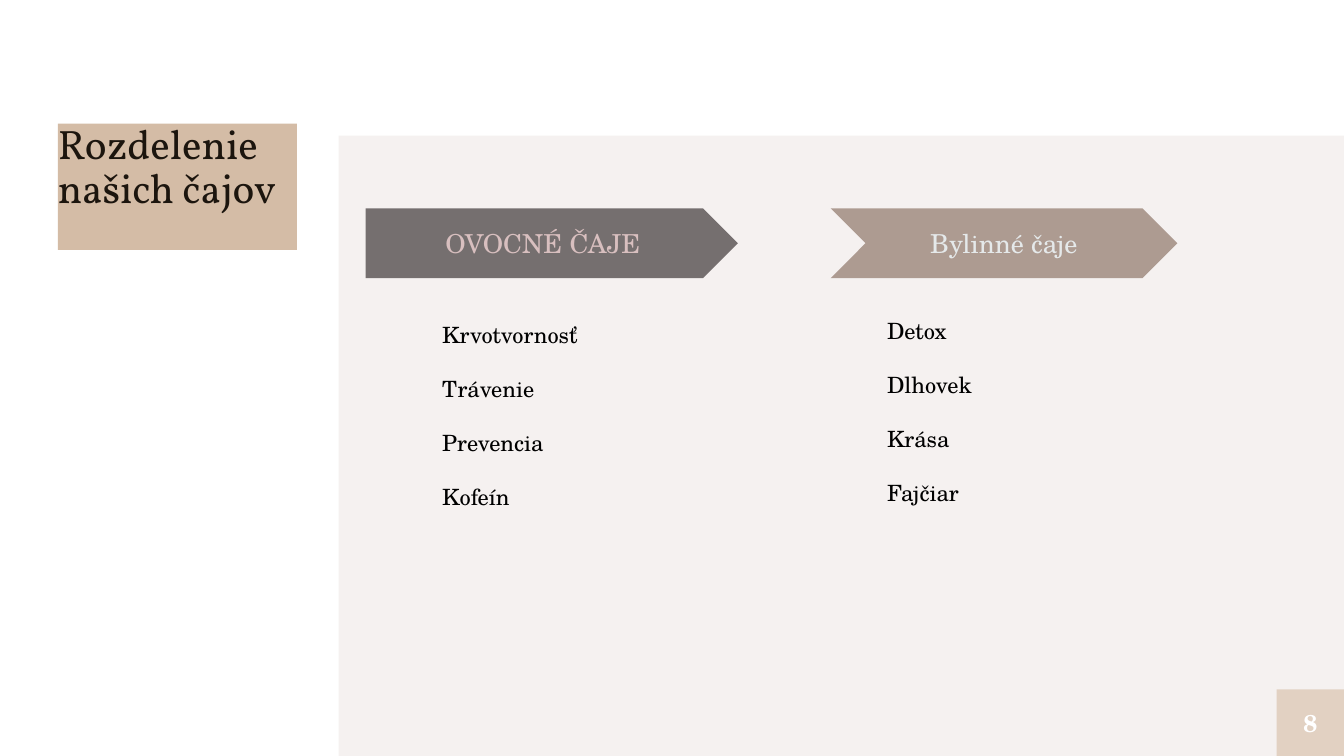
from pptx import Presentation
from pptx import util as u
from pptx.dml.color import RGBColor
from pptx.enum import shapes, text
from lxml import etree

COLORS = {
    "panel": "F5F1F0", "title_fill": "D4BCA6", "title": "1C150E",
    "page_fill": "E2D1C2", "page": "FFFFFF",
    "fruit_fill": "756F6F", "fruit": "D8BFBF",
    "herbal_fill": "AD9B91", "herbal": "E5E9EA", "list": "000000",
}
A_NS = "http://schemas.openxmlformats.org/drawingml/2006/main"
SHAPE = shapes.MSO_SHAPE


class TeaSlide:
    heading_font = "Vollkorn"
    body_font = "TeX Gyre Schola"

    def __init__(self, slide):
        self.slide = slide

    def place(self, element, box):
        element.left, element.top, element.width, element.height = map(u.Inches, box)

    def fill(self, element, color):
        element.fill.solid()
        element.fill.fore_color.rgb = RGBColor.from_string(COLORS[color])

    def frame(self, element, inset, anchor):
        frame = element.text_frame
        frame.word_wrap = True
        frame.auto_size = text.MSO_AUTO_SIZE.NONE
        frame.vertical_anchor = anchor
        frame.margin_left = frame.margin_right = u.Inches(inset[0])
        frame.margin_top = frame.margin_bottom = u.Inches(inset[1])
        return frame

    def style(self, paragraph, size, color, font, align, bold=False):
        paragraph.alignment = align
        for run in paragraph.runs:
            run.font.size = u.Pt(size)
            run.font.name = font
            run.font.bold = bold
            run.font.color.rgb = RGBColor.from_string(COLORS[color])

    def block(self, kind, box, fill):
        block = self.slide.shapes.add_shape(kind, *map(u.Inches, box))
        block.shadow.inherit = False
        block.line.fill.background()
        self.fill(block, fill)
        return block

    def backdrop(self, box, fill):
        panel = self.block(SHAPE.RECTANGLE, box, fill).element
        panel.getparent().insert(2, panel)

    def title(self, words, box):
        heading = self.slide.shapes.title
        self.place(heading, box)
        self.fill(heading, "title_fill")
        frame = self.frame(heading, (0, 0), text.MSO_ANCHOR.TOP)
        frame.text = words
        frame.paragraphs[0].line_spacing = 0.9
        self.style(frame.paragraphs[0], 22, "title", self.heading_font, text.PP_ALIGN.LEFT)

    def label(self, kind, words, box, fill, color, size, inset=0, bold=False):
        label = self.block(kind, box, fill)
        frame = self.frame(label, (inset, inset), text.MSO_ANCHOR.MIDDLE)
        frame.text = words
        self.style(frame.paragraphs[0], size, color, self.body_font,
                   text.PP_ALIGN.CENTER, bold)

    def tea_list(self, idx, teas, box, inset):
        body = self.slide.placeholders[idx]
        self.place(body, box)
        frame = self.frame(body, inset, text.MSO_ANCHOR.TOP)
        frame.text = "\n".join(teas)
        for row, paragraph in enumerate(frame.paragraphs):
            paragraph.space_before = u.Pt(14.5 if row else 0)
            self.style(paragraph, 12, "list", self.body_font, text.PP_ALIGN.LEFT)
            properties = paragraph._p.get_or_add_pPr()
            properties.set("marL", "0")
            properties.set("indent", "0")
            etree.SubElement(properties, f"{{{A_NS}}}buNone")


def main():
    deck = Presentation()
    deck.slide_width = u.Inches(10)
    deck.slide_height = deck.slide_width * 9 // 16
    page = TeaSlide(deck.slides.add_slide(deck.slide_layouts[3]))

    page.backdrop((2.52, 1.01, 7.48, 4.62), "panel")
    page.title("Rozdelenie našich čajov", (0.43, 0.92, 1.78, 0.94))
    page.label(SHAPE.RECTANGLE, "8", (9.5, 5.13, 0.5, 0.5),
               "page_fill", "page", 13, bold=True)
    page.label(SHAPE.PENTAGON, "OVOCNÉ ČAJE", (2.72, 1.55, 2.77, 0.52),
               "fruit_fill", "fruit", 14, inset=0.1)
    page.label(SHAPE.CHEVRON, "Bylinné čaje", (6.18, 1.55, 2.58, 0.52),
               "herbal_fill", "herbal", 14, inset=0.1)
    page.tea_list(1, ["Krvotvornosť", "Trávenie", "Prevencia", "Kofeín"],
                  (3.19, 2.34, 1.57, 1.51), (0.1, 0.05))
    page.tea_list(2, ["Detox", "Dlhovek", "Krása", "Fajčiar"],
                  (6.5, 2.26, 1.75, 2.04), (0.1, 0.1))
    deck.save("out.pptx")


if __name__ == "__main__":
    main()
